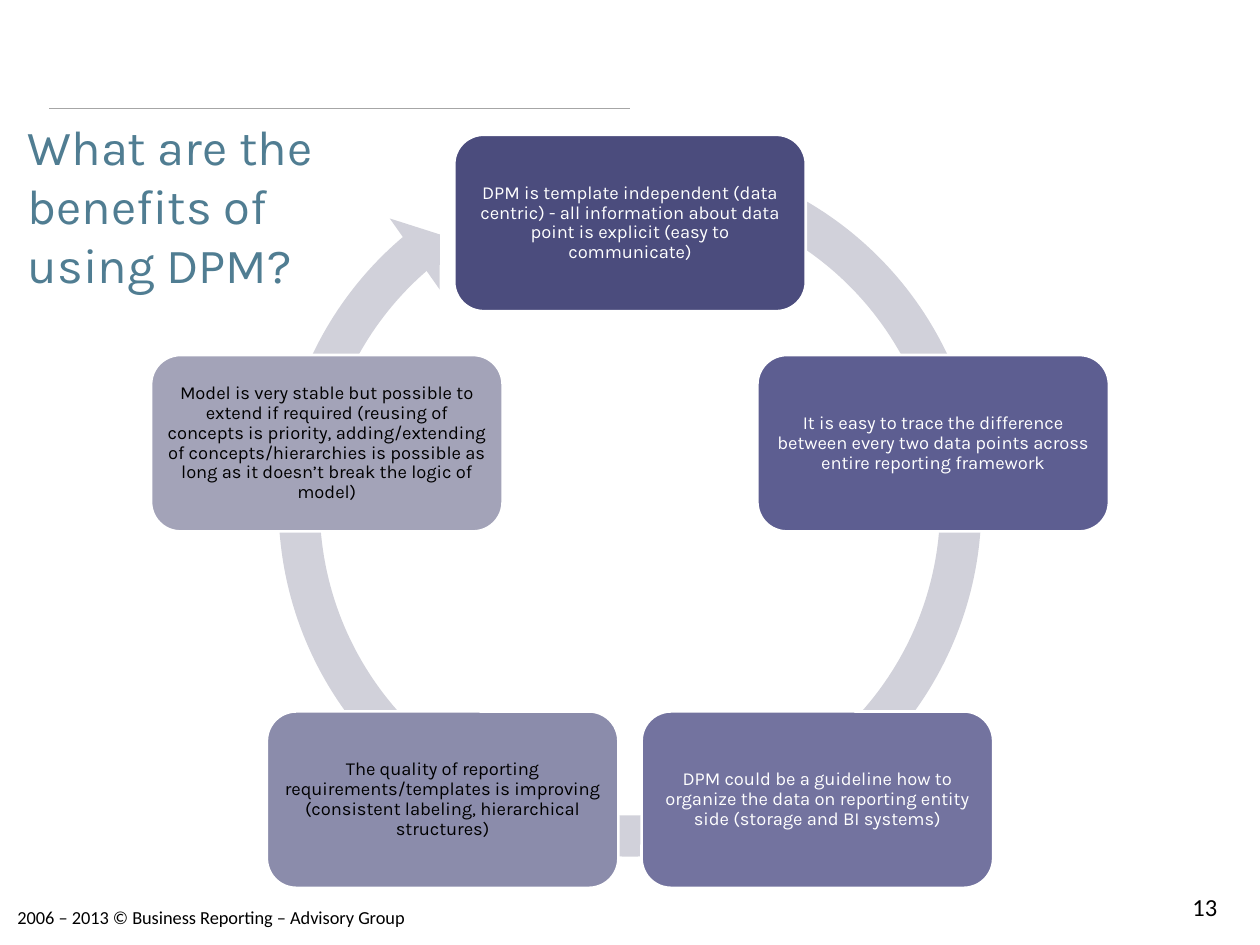
from math import cos, radians, sin

from lxml import etree
from pptx import Presentation
from pptx.dml.color import RGBColor
from pptx.enum.shapes import MSO_CONNECTOR, MSO_SHAPE
from pptx.enum.text import MSO_ANCHOR, MSO_AUTO_SIZE, PP_ALIGN
from pptx.oxml.ns import qn
from pptx.util import Inches, Pt

MIDDLE, TOP = MSO_ANCHOR.MIDDLE, MSO_ANCHOR.TOP
LEFT, CENTER, RIGHT = PP_ALIGN.LEFT, PP_ALIGN.CENTER, PP_ALIGN.RIGHT

# Content
TITLE = "What are the benefits of using DPM?"
FOOTER = "2006 – 2013 © Business Reporting – Advisory Group"
PAGE_NUMBER = "13"
BENEFITS = [  # text, fill, text colour; clockwise from the top
    ("DPM is template independent (data centric) - all information about "
     "data point is explicit (easy to communicate)", "4B4C7D", "FFFFFF"),
    ("It is easy to trace the difference between every two data points "
     "across entire reporting framework", "5D5E91", "FFFFFF"),
    ("DPM could be a guideline how to organize the data on reporting entity "
     "side (storage and BI systems)", "73739F", "FFFFFF"),
    ("The quality of reporting requirements/templates is improving "
     "(consistent labeling, hierarchical structures)", "8B8CAB", "000000"),
    ("Model is very stable but possible to extend if required (reusing of "
     "concepts is priority, adding/extending of concepts/hierarchies is "
     "possible as long as it doesn’t break the logic of model)",
     "A3A3B8", "000000"),
]

# Cycle geometry in inches
CENTER_X, CENTER_Y, RADIUS = 5, 4.3, 2.53
CARD_WIDTH, CARD_HEIGHT = 2.79, 1.4
RING_BOX = (2.03, 1.04, 5.94, 5.94)
RING_ADJUSTMENTS = (0.055, 3.307, 137.65, 173.92, 0.058)


def color(value):
    return RGBColor.from_string(value)


def inches(*values):
    return [Inches(value) for value in values]


def write(shape, text, size, font, hue, align=LEFT, anchor=TOP, wrap=True):
    frame = shape.text_frame
    frame.text = text
    frame.word_wrap = wrap
    frame.auto_size = MSO_AUTO_SIZE.NONE
    frame.vertical_anchor = anchor
    para = frame.paragraphs[0]
    para.alignment = align
    para.font.size = Pt(size)
    para.font.name = font
    para.font.color.rgb = color(hue)
    return para


def add_filled(page, kind, box, fill):
    shape = page.shapes.add_shape(kind, *inches(*box))
    shape.shadow.inherit = False
    shape.fill.solid()
    shape.fill.fore_color.rgb = color(fill)
    return shape


def add_card(page, index, text, fill, hue):
    angle = radians(index * 360 / len(BENEFITS))
    left = CENTER_X + RADIUS * sin(angle) - CARD_WIDTH / 2
    top = CENTER_Y - RADIUS * cos(angle) - CARD_HEIGHT / 2
    card = add_filled(page, MSO_SHAPE.ROUNDED_RECTANGLE,
                      (left, top, CARD_WIDTH, CARD_HEIGHT), fill)
    card.line.color.rgb = color("FFFFFF")
    card.line.width = Pt(1.5)
    frame = card.text_frame
    frame.margin_left = frame.margin_right = Inches(0.05)
    frame.margin_top = frame.margin_bottom = Inches(0.05)
    para = write(card, text, 10.5, "Karla", hue, CENTER, MIDDLE)
    para.line_spacing = 0.9
    para.space_after = Pt(3.7)


def main():
    deck = Presentation()
    deck.slide_width, deck.slide_height = inches(10, 7.5)
    page = deck.slides.add_slide(deck.slide_layouts[5])

    # Header rule and title
    rule = page.shapes.add_connector(MSO_CONNECTOR.STRAIGHT,
                                     *inches(0.39, 0.86, 5, 0.86))
    rule.line.color.rgb = color("A6A6A6")
    rule.line.width = Pt(0.25)
    etree.SubElement(rule._element.spPr, qn("a:effectLst"))
    title = page.shapes.title
    title.left, title.top, title.width, title.height = inches(
        0.12, 1.23, 2.76, 0.79)
    write(title, TITLE, 28, "Karla", "507D92", anchor=MIDDLE)

    # Cycle: ring arrow behind, cards in front
    ring = add_filled(page, MSO_SHAPE.CIRCULAR_ARROW, RING_BOX, "D1D1DA")
    ring.line.fill.background()
    for index, value in enumerate(RING_ADJUSTMENTS):
        ring.adjustments[index] = value
    for index, benefit in enumerate(BENEFITS):
        add_card(page, index, *benefit)

    # Footer and page number
    footer = page.shapes.add_textbox(*inches(0.04, 7.14, 3.31, 0.28))
    write(footer, FOOTER, 10.5, "Calibri", "000000", wrap=False)
    number = page.shapes.add_textbox(*inches(8.93, 7.03, 0.83, 0.31))
    write(number, PAGE_NUMBER, 14, "Calibri", "000000", RIGHT)

    deck.save("out.pptx")


if __name__ == "__main__":
    main()
